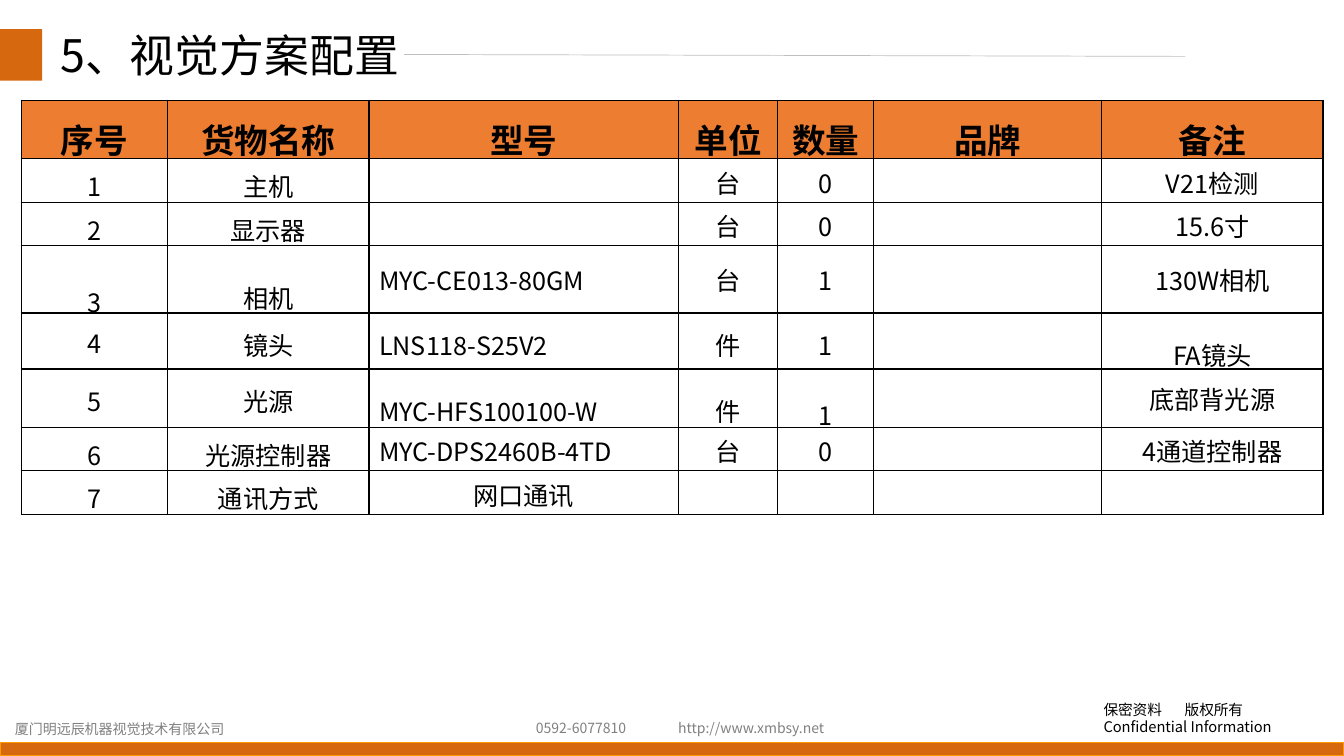
from lxml.etree import SubElement
from pptx import Presentation
from pptx.dml.color import RGBColor
from pptx.enum.shapes import MSO_CONNECTOR, MSO_SHAPE
from pptx.enum.text import MSO_ANCHOR, PP_ALIGN
from pptx.oxml.ns import qn
from pptx.util import Pt

COLORS = {
    "bar": "D6680F",
    "bar_edge": "FF9900",
    "header": "ED7D31",
    "white": "FFFFFF",
    "black": "000000",
    "grey": "808080",
    "rule": "BFBFBF",
}
FONT = "Noto Sans CJK SC"
COLUMN_WIDTHS = [104.6, 143.9, 221.1, 71, 68.4, 162.9, 158.1]
ROW_HEIGHTS = [41.4, 31, 31, 47.9, 40, 41.8, 31, 31]
MODEL_COLUMN = 2
ROWS = [
    ["序号", "货物名称", "型号", "单位", "数量", "品牌", "备注"],
    ["1", "主机", "", "台", "0", "", "V21检测"],
    ["2", "显示器", "", "台", "0", "", "15.6寸"],
    ["3", "相机", "MYC-CE013-80GM", "台", "1", "", "130W相机"],
    ["4", "镜头", "LNS118-S25V2", "件", "1", "", "FA镜头"],
    ["5", "光源", "MYC-HFS100100-W", "件", "1", "", "底部背光源"],
    ["6", "光源控制器", "MYC-DPS2460B-4TD", "台", "0", "", "4通道控制器"],
    ["7", "通讯方式", "网口通讯", "", "", "", ""],
]
PLAIN_SPACINGS = [1.1, 1.1, 1, 1, 1, 1, 1]
LINE_SPACINGS = [
    [1.2] * 7,
    PLAIN_SPACINGS,
    PLAIN_SPACINGS,
    [1.9, 1.8, 1, 1, 1, 1, 1],
    [1.1, 1.2, 1.2, 1.2, 1.2, 1, 1.5],
    [1.1, 1.1, 1.5, 1.5, 1.6, 1, 1],
    PLAIN_SPACINGS,
    PLAIN_SPACINGS,
]


def rgb(name):
    return RGBColor.from_string(COLORS[name])


def apply_format(target, values):
    for name, value in values.items():
        setattr(target, name, value)


def write_text(paragraph, text, size, color="black", bold=False, **layout):
    apply_format(paragraph, layout)
    run = paragraph.add_run()
    run.text = text
    apply_format(run.font, {"size": Pt(size), "bold": bold, "name": FONT})
    run.font.color.rgb = rgb(color)
    SubElement(run.font._element, qn("a:ea"), typeface=FONT)


def add_bar(slide, left, top, width, height, edge=None):
    shape = slide.shapes.add_shape(
        MSO_SHAPE.RECTANGLE, Pt(left), Pt(top), Pt(width), Pt(height))
    shape.shadow.inherit = False
    shape.fill.solid()
    shape.fill.fore_color.rgb = rgb("bar")
    if edge:
        shape.line.color.rgb = rgb(edge)
        shape.line.width = Pt(1)
    else:
        shape.line.fill.background()


def add_rule(slide, start_x, start_y, end_x, end_y):
    connector = slide.shapes.add_connector(
        MSO_CONNECTOR.STRAIGHT, Pt(start_x), Pt(start_y), Pt(end_x), Pt(end_y))
    connector.line.color.rgb = rgb("rule")
    connector.line.width = Pt(0.5)
    SubElement(connector._element.spPr, qn("a:effectLst"))


def add_text(slide, left, top, width, height, lines, size, color="black", **layout):
    box = slide.shapes.add_textbox(Pt(left), Pt(top), Pt(width), Pt(height))
    frame = box.text_frame
    frame.word_wrap = True
    for index, line in enumerate(lines):
        paragraph = frame.add_paragraph() if index else frame.paragraphs[0]
        write_text(paragraph, line, size, color, **layout)
    return frame


def add_tab_stop(paragraph, position):
    properties = paragraph._p.get_or_add_pPr()
    stops = SubElement(properties, qn("a:tabLst"))
    SubElement(stops, qn("a:tab"), pos=str(Pt(position)), algn="l")


def add_borders(cell):
    properties = cell._tc.get_or_add_tcPr()
    for index, side in enumerate(("lnL", "lnR", "lnT", "lnB")):
        line = SubElement(properties, qn(f"a:{side}"), w=str(Pt(1)))
        fill = SubElement(line, qn("a:solidFill"))
        SubElement(fill, qn("a:srgbClr"), val=COLORS["black"])
        properties.insert(index, line)


def fill_cell(cell, text, spacing, is_header, is_model):
    cell.fill.solid()
    cell.fill.fore_color.rgb = rgb("header" if is_header else "white")
    add_borders(cell)
    cell.vertical_anchor = MSO_ANCHOR.TOP if is_header else MSO_ANCHOR.MIDDLE
    if text:
        write_text(
            cell.text_frame.paragraphs[0], text, 24 if is_header else 18,
            bold=is_header, line_spacing=spacing,
            alignment=PP_ALIGN.LEFT if is_model else PP_ALIGN.CENTER)


def add_configuration_table(slide, left, top):
    table = slide.shapes.add_table(
        len(ROWS), len(COLUMN_WIDTHS), Pt(left), Pt(top),
        Pt(sum(COLUMN_WIDTHS)), Pt(sum(ROW_HEIGHTS))).table
    for column, width in zip(table.columns, COLUMN_WIDTHS):
        column.width = Pt(width)
    for row, height in zip(table.rows, ROW_HEIGHTS):
        row.height = Pt(height)
    for row_index, (texts, spacings) in enumerate(zip(ROWS, LINE_SPACINGS)):
        for column_index, (text, spacing) in enumerate(zip(texts, spacings)):
            is_model = column_index == MODEL_COLUMN and "-" in text
            fill_cell(table.cell(row_index, column_index), text, spacing,
                      row_index == 0, is_model)


def main():
    presentation = Presentation()
    presentation.slide_width = Pt(960)
    presentation.slide_height = Pt(540)
    slide = presentation.slides.add_slide(presentation.slide_layouts[6])

    add_bar(slide, 0, 20.9, 30.2, 36.7)
    add_bar(slide, 0, 530.6, 960, 9.4, "bar_edge")
    notice = add_text(slide, 781.2, 496.8, 156.2, 32.4,
                      ["保密资料\t版权所有", "Confidential Information"], 10.5)
    add_tab_stop(notice.paragraphs[0], 58)
    add_text(slide, 477.4, 510.5, 120.2, 19.4, ["http://www.xmbsy.net"], 10, "grey")
    add_text(slide, 375.8, 510.5, 86.4, 19.4, ["0592-6077810"], 10, "grey")
    add_text(slide, 3.6, 511.2, 169.2, 19.4, ["厦门明远辰机器视觉技术有限公司"], 10, "grey")
    add_rule(slide, 288.7, 38.9, 846.7, 40.3)
    add_text(slide, 36, 20.9, 275.8, 51.1, ["5、视觉方案配置"], 32, line_spacing=0.9)
    add_configuration_table(slide, 15.1, 71.6)
    presentation.save("out.pptx")


if __name__ == "__main__":
    main()
